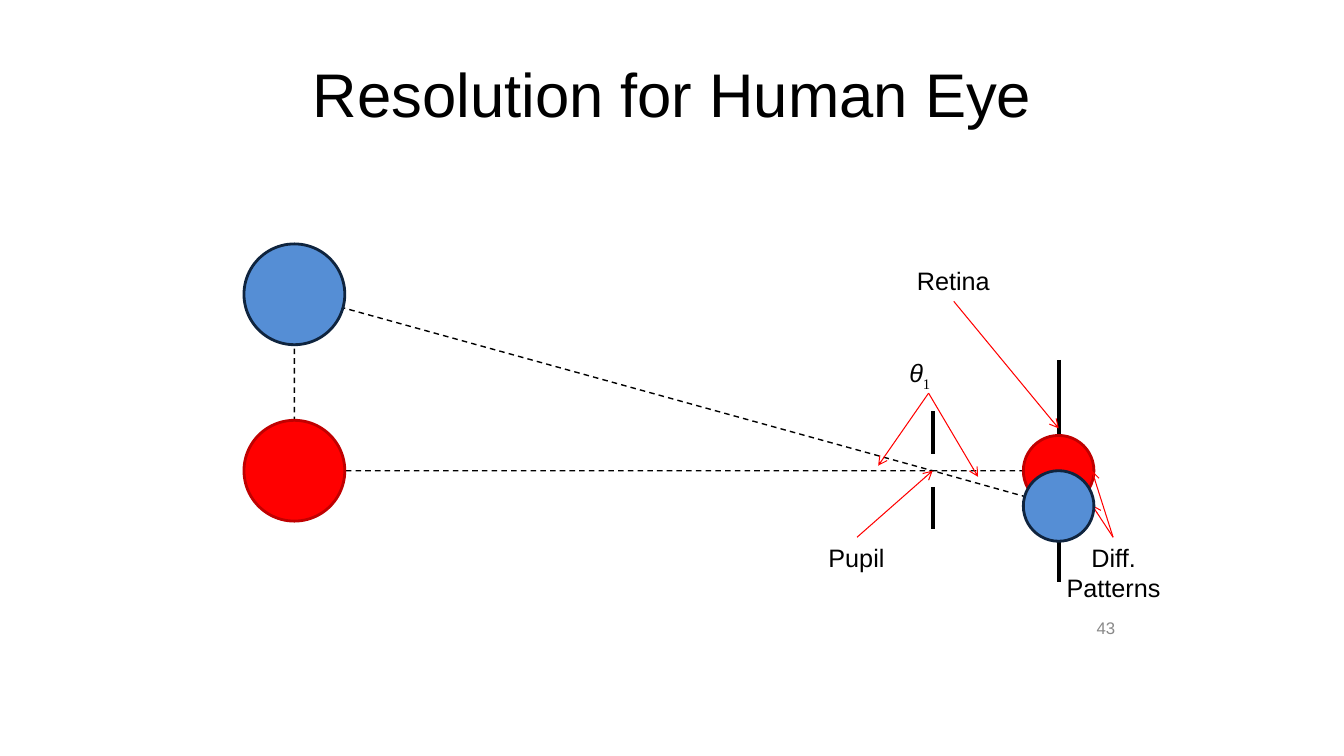
from pptx import Presentation
from pptx.dml.color import RGBColor
from pptx.enum.dml import MSO_LINE
from pptx.enum.shapes import MSO_CONNECTOR, MSO_SHAPE
from pptx.enum.text import MSO_ANCHOR, PP_ALIGN
from pptx.oxml.ns import qn
from pptx.util import Inches, Pt
from lxml.etree import SubElement

THEME = {
    "black": RGBColor.from_string("000000"),
    "grey": RGBColor.from_string("898989"),
    "arrow": RGBColor.from_string("FF0000"),
    "red": (RGBColor.from_string("FF0000"), RGBColor.from_string("C00000")),
    "blue": (RGBColor.from_string("558ED5"), RGBColor.from_string("0F243E")),
    "font": "Arial",
    "sub_font": "Times New Roman",
    "title": 44,
    "label": 18,
    "number": 12,
}

prs = Presentation()
prs.slide_width, prs.slide_height = Inches(13.33), Inches(7.5)
s = prs.slides.add_slide(prs.slide_layouts[6])


def add_text(text, box, size=THEME["label"], color=THEME["black"],
             align=PP_ALIGN.CENTER, anchor=MSO_ANCHOR.TOP, italic=False, sub=""):
    tf = s.shapes.add_textbox(*map(Inches, box)).text_frame
    tf.word_wrap = True
    tf.vertical_anchor = anchor
    p = tf.paragraphs[0]
    p.alignment = align
    for part in filter(None, (text, sub)):
        r = p.add_run()
        r.text = part
        r.font.size = Pt(size)
        r.font.color.rgb = color
        r.font.name = THEME["font"]
        r.font.italic = italic
    if sub:
        r.font.name = THEME["sub_font"]
        r.font.italic = False
        r.font._element.set("baseline", "-25000")


def add_line(start, end, color=THEME["black"], width=3, arrow=False):
    c = s.shapes.add_connector(MSO_CONNECTOR.STRAIGHT, *map(Inches, start + end))
    c.line.color.rgb = color
    c.line.width = Pt(width)
    if arrow:
        SubElement(c.line._get_or_add_ln(), qn("a:tailEnd"), type="arrow")
    SubElement(c._element.spPr, qn("a:effectLst"))


add_text("Resolution for Human Eye", (0.67, 0.3, 12, 1.25),
         size=THEME["title"], anchor=MSO_ANCHOR.MIDDLE)

retina_x, pupil_x, object_x, axis_y = 10.5, 9.25, 2.92, 4.67
object_height, image_height = 1.75, 0.35

add_line((retina_x, 3.57), (retina_x, 5.77))
for top in (4.08, 4.83):
    add_line((pupil_x, top), (pupil_x, top + 0.42))

for left, top, width, height, turn in (
    (object_x, axis_y - object_height, pupil_x - object_x, object_height, 0),
    (pupil_x, axis_y, retina_x - pupil_x, image_height, 180),
):
    rays = s.shapes.add_shape(MSO_SHAPE.RIGHT_TRIANGLE,
                              *map(Inches, (left, top, width, height)))
    rays.rotation = turn
    rays.shadow.inherit = False
    rays.fill.background()
    rays.line.color.rgb = THEME["black"]
    rays.line.width = Pt(1)
    rays.line.dash_style = MSO_LINE.DASH

theta, patterns = (9.21, 3.9), (11.04, 5.33)
arrows = [
    ((9.46, 2.99), (retina_x, 4.25)),
    ((8.5, 5.33), (pupil_x, axis_y)),
    (theta, (8.71, 4.62)),
    (theta, (9.7, 4.73)),
    (patterns, (10.83, axis_y)),
    (patterns, (10.83, 5.01)),
]
discs = {
    "red": [(object_x, axis_y, 1), (retina_x, axis_y, 0.7)],
    "blue": [(object_x, axis_y - object_height, 1),
             (retina_x, axis_y + image_height, 0.7)],
}
for name, places in discs.items():
    if name == "blue":
        for start, end in arrows:
            add_line(start, end, color=THEME["arrow"], width=0.75, arrow=True)
    fill, edge = THEME[name]
    for x, y, size in places:
        disc = s.shapes.add_shape(MSO_SHAPE.OVAL, Inches(x - size / 2),
                                  Inches(y - size / 2), Inches(size), Inches(size))
        disc.shadow.inherit = False
        disc.fill.solid()
        disc.fill.fore_color.rgb = fill
        disc.line.color.rgb = edge
        disc.line.width = Pt(2)

for text, box in (
    ("Retina", (8.83, 2.58, 1.25, 0.4)),
    ("Pupil", (8.08, 5.33, 0.83, 0.4)),
    ("Diff. Patterns", (10.42, 5.33, 1.25, 0.71)),
):
    add_text(text, box)
add_text("θ", (8.92, 3.5, 0.58, 0.4), align=PP_ALIGN.LEFT, italic=True, sub="1")
add_text("43", (8.83, 6.03, 2.33, 0.4), size=THEME["number"], color=THEME["grey"],
         align=PP_ALIGN.RIGHT, anchor=MSO_ANCHOR.MIDDLE)

prs.save("out.pptx")
